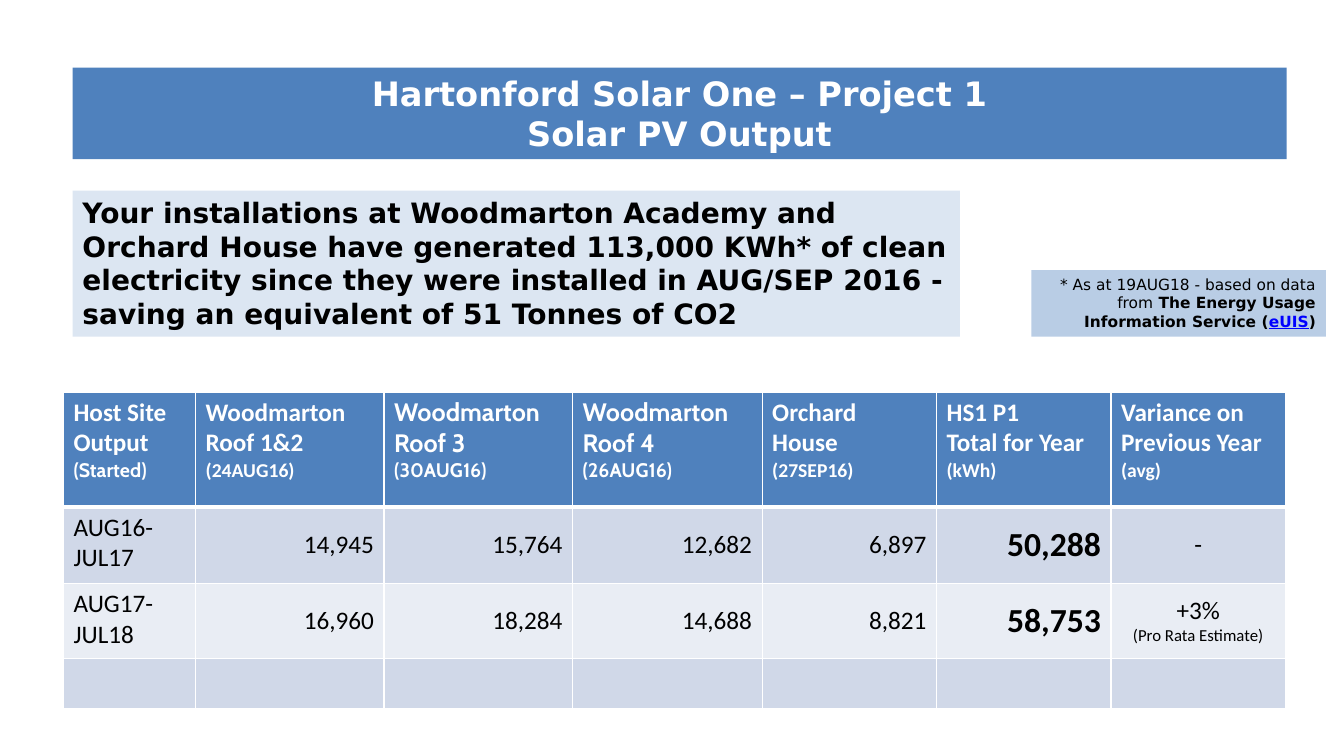
from lxml import etree
from pptx import Presentation
from pptx.dml.color import RGBColor
from pptx.enum.text import MSO_ANCHOR, MSO_AUTO_SIZE, PP_ALIGN
from pptx.oxml.ns import qn
from pptx.util import Inches, Pt

LEFT, CENTER, RIGHT = PP_ALIGN.LEFT, PP_ALIGN.CENTER, PP_ALIGN.RIGHT
TOP, MIDDLE = MSO_ANCHOR.TOP, MSO_ANCHOR.MIDDLE
NO_AUTOFIT = MSO_AUTO_SIZE.NONE
TITLE_ONLY_LAYOUT = 5

COLORS = {
    "blue": "4F81BD",
    "statement": "DCE6F2",
    "note": "B9CDE5",
    "band_dark": "D0D8E8",
    "band_light": "E9EDF4",
    "white": "FFFFFF",
    "black": "000000",
    "link": "0000FF",
}
SANS, BODY, CABIN = "DejaVu Sans", "Calibri", "Cabin"

HEADING = {"name": BODY, "size": 18, "bold": True, "color": "white"}
HEADING_CABIN = {**HEADING, "name": CABIN}
DETAIL = {**HEADING, "size": 14}
DETAIL_CABIN = {**DETAIL, "name": CABIN}
VALUE = {"name": BODY, "size": 18, "bold": False, "color": "black"}
TOTAL = {**VALUE, "size": 24, "bold": True}
ESTIMATE = {**VALUE, "size": 12}
TITLE = {"name": SANS, "size": 24, "bold": True, "color": "white"}
STATEMENT = {"name": SANS, "size": 20, "bold": True, "color": "black"}
NOTE = {"name": SANS, "size": 11, "bold": False, "color": "black"}
NOTE_BOLD = {**NOTE, "bold": True}
NOTE_LINK = {**NOTE_BOLD, "color": "link", "underline": True}

COLUMN_WIDTHS = [1.31, 1.87, 1.87, 1.88, 1.73, 1.73, 1.73]
ROW_HEIGHTS = [1.14, 0.76, 0.74, 0.5]
ROW_FILLS = ["blue", "band_dark", "band_light", "band_dark"]

HEADERS = [
    [[("Host Site Output", HEADING)], [("(Started)", DETAIL_CABIN)]],
    [[("Woodmarton Roof 1&2", HEADING)], [("(24AUG16)", DETAIL)]],
    [[("Woodmarton Roof 3", HEADING_CABIN)], [("(30AUG16)", DETAIL_CABIN)]],
    [[("Woodmarton Roof 4", HEADING_CABIN)], [("(26AUG16)", DETAIL_CABIN)]],
    [[("Orchard House", HEADING)], [("(27SEP16)", DETAIL)]],
    [[("HS1 P1", HEADING)], [("Total for Year ", HEADING), ("(kWh)", DETAIL)]],
    [[("Variance on Previous Year ", HEADING), ("(avg)", DETAIL)]],
]
YEARS = [
    ("AUG16-JUL17", ["14,945", "15,764", "12,682", "6,897"], "50,288",
     [[("-", VALUE)]]),
    ("AUG17-JUL18", ["16,960", "18,284", "14,688", "8,821"], "58,753",
     [[("+3%", VALUE)], [("(Pro Rata Estimate)", ESTIMATE)]]),
]


def rgb(name):
    return RGBColor.from_string(COLORS[name])


def set_fill(target, color):
    target.fill.solid()
    target.fill.fore_color.rgb = rgb(color)


def write_text(frame, paragraphs, alignment):
    for index, runs in enumerate(paragraphs):
        paragraph = frame.paragraphs[0] if index == 0 else frame.add_paragraph()
        paragraph.alignment = alignment
        for text, style in runs:
            run = paragraph.add_run()
            run.text = text
            for attribute, value in style.items():
                if attribute == "color":
                    run.font.color.rgb = rgb(value)
                else:
                    setattr(run.font, attribute, Pt(value) if attribute == "size" else value)


def format_panel(shape, box, color, paragraphs, alignment, anchor):
    for attribute, value in zip(("left", "top", "width", "height"), box):
        setattr(shape, attribute, Inches(value))
    set_fill(shape, color)
    frame = shape.text_frame
    settings = {"word_wrap": True, "auto_size": NO_AUTOFIT, "vertical_anchor": anchor}
    for attribute, value in settings.items():
        setattr(frame, attribute, value)
    write_text(frame, paragraphs, alignment)


def add_panel(slide, box, color, paragraphs, alignment):
    shape = slide.shapes.add_textbox(*map(Inches, box))
    format_panel(shape, box, color, paragraphs, alignment, TOP)


def set_borders(cell, widths):
    properties = cell._tc.get_or_add_tcPr()
    for side, width in widths.items():
        line = etree.SubElement(properties, qn(f"a:ln{side}"), w=str(Pt(width)))
        fill = etree.SubElement(line, qn("a:solidFill"))
        etree.SubElement(fill, qn("a:srgbClr"), val=COLORS["white"])


def table_rows():
    yield [(header, LEFT, TOP) for header in HEADERS]
    for period, outputs, total, variance in YEARS:
        yield [
            ([[(period, VALUE)]], LEFT, TOP),
            *[([[(output, VALUE)]], RIGHT, MIDDLE) for output in outputs],
            ([[(total, TOTAL)]], RIGHT, MIDDLE),
            (variance, CENTER, MIDDLE),
        ]
    yield [([], LEFT, TOP)] * len(HEADERS)


def add_output_table(slide):
    box = (0.63, 3.89, sum(COLUMN_WIDTHS), sum(ROW_HEIGHTS))
    table = slide.shapes.add_table(
        len(ROW_HEIGHTS), len(COLUMN_WIDTHS), *map(Inches, box)).table
    for column, width in zip(table.columns, COLUMN_WIDTHS):
        column.width = Inches(width)
    for row_index, contents in enumerate(table_rows()):
        row = table.rows[row_index]
        row.height = Inches(ROW_HEIGHTS[row_index])
        widths = {"L": 1, "R": 1, "T": 3 if row_index == 1 else 1,
                  "B": 3 if row_index == 0 else 1}
        for cell, (paragraphs, alignment, anchor) in zip(row.cells, contents):
            set_borders(cell, widths)
            set_fill(cell, ROW_FILLS[row_index])
            cell.vertical_anchor = anchor
            write_text(cell.text_frame, paragraphs, alignment)


def main():
    presentation = Presentation()
    presentation.slide_width = Inches(13.33)
    presentation.slide_height = Inches(7.5)
    slide = presentation.slides.add_slide(presentation.slide_layouts[TITLE_ONLY_LAYOUT])
    format_panel(slide.shapes.title, (0.72, 0.67, 12.04, 0.91), "blue", [
        [("Hartonford Solar One – Project 1", TITLE)],
        [("Solar PV Output", TITLE)],
    ], CENTER, MIDDLE)
    add_output_table(slide)
    add_panel(slide, (0.72, 1.89, 8.8, 1.45), "statement", [[(
        "Your installations at Woodmarton Academy and Orchard House have generated "
        "113,000 KWh* of clean electricity since they were installed in AUG/SEP 2016 "
        "- saving an equivalent of 51 Tonnes of CO2", STATEMENT)]], LEFT)
    add_panel(slide, (10.23, 2.68, 2.92, 0.66), "note", [[
        ("* As at 19AUG18 - based on data from", NOTE),
        (" The Energy Usage Information Service (", NOTE_BOLD),
        ("eUIS", NOTE_LINK),
        (")", NOTE_BOLD),
    ]], RIGHT)
    presentation.save("out.pptx")


if __name__ == "__main__":
    main()
